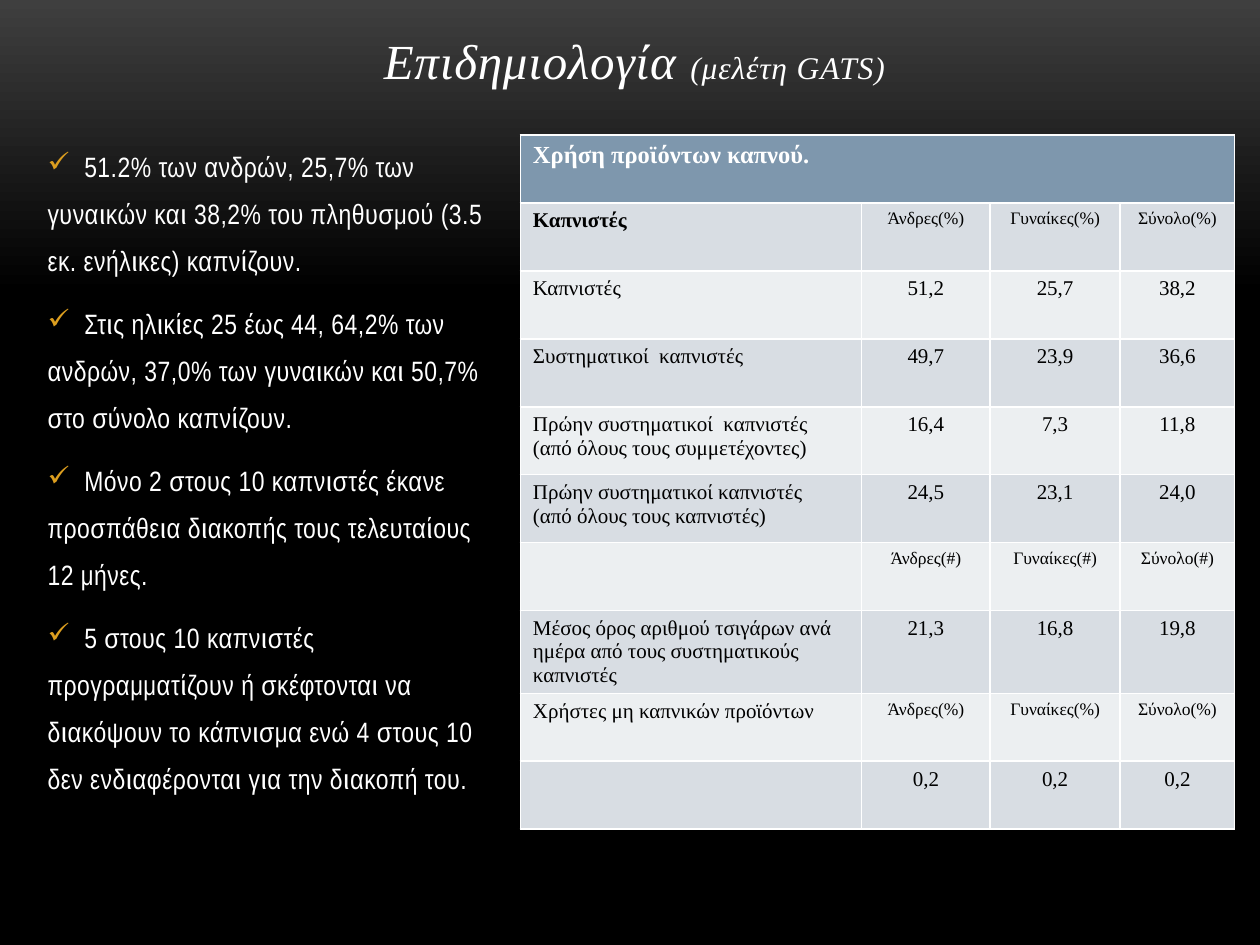
"""Build the slide on smoking rates with a title, a checked list and a table."""
from dataclasses import dataclass

import pptx
import pptx.dml.color
import pptx.enum.text
import pptx.oxml
import pptx.oxml.ns
import pptx.util

Cm = pptx.util.Cm
Pt = pptx.util.Pt
RGBColor = pptx.dml.color.RGBColor
Align = pptx.enum.text.PP_ALIGN

WHITE = RGBColor(0xFF, 0xFF, 0xFF)
BLACK = RGBColor(0x00, 0x00, 0x00)
GREY = RGBColor(0x3F, 0x3F, 0x3F)
BLUE = RGBColor(0x7E, 0x97, 0xAD)
DARK = RGBColor(0xD8, 0xDD, 0xE3)
LIGHT = RGBColor(0xEC, 0xEF, 0xF1)
GOLD = RGBColor(0xDC, 0x9E, 0x1F)
SERIF = "Times New Roman"
NARROW = "Arial Narrow"
TOP = Cm(2.72)


@dataclass
class Row:
    label: str
    cells: tuple[str, ...]
    size: int = 12
    bold: bool = False


def heads(unit: str) -> tuple[str, ...]:
    """Return the three column heads with their unit."""
    return tuple(f"{name}({unit})" for name in ("Άνδρες", "Γυναίκες", "Σύνολο"))


ROWS = [
    Row("Καπνιστές", heads("%"), 10, True),
    Row("Καπνιστές", ("51,2", "25,7", "38,2")),
    Row("Συστηματικοί  καπνιστές", ("49,7", "23,9", "36,6")),
    Row("Πρώην συστηματικοί  καπνιστές (από όλους τους συμμετέχοντες)",
        ("16,4", "7,3", "11,8")),
    Row("Πρώην συστηματικοί καπνιστές  (από όλους τους καπνιστές)",
        ("24,5", "23,1", "24,0")),
    Row("", heads("#"), 10),
    Row("Μέσος όρος αριθμού τσιγάρων ανά ημέρα από τους συστηματικούς καπνιστές",
        ("21,3", "16,8", "19,8")),
    Row("Χρήστες μη καπνικών προϊόντων", heads("%"), 10),
    Row("", ("0,2", "0,2", "0,2")),
]
WIDTHS = (6.88, 2.59, 2.62, 2.31)
POINTS = [
    "51.2% των ανδρών, 25,7% των γυναικών και 38,2% του πληθυσμού "
    "(3.5 εκ. ενήλικες) καπνίζουν.",
    "Στις ηλικίες 25 έως 44, 64,2% των ανδρών, 37,0% των γυναικών "
    "και 50,7% στο σύνολο καπνίζουν.",
    "Μόνο 2 στους 10 καπνιστές έκανε προσπάθεια διακοπής τους "
    "τελευταίους 12 μήνες.",
    "5 στους 10 καπνιστές προγραμματίζουν ή σκέφτονται να διακόψουν το "
    "κάπνισμα ενώ 4 στους 10 δεν ενδιαφέρονται για την διακοπή του.",
]


def style(par, face: str, size: float, tint: RGBColor, bold: bool = False) -> None:
    """Set the font of a whole paragraph."""
    font = par.font
    font.name, font.size, font.bold = face, Pt(size), bold
    font.color.rgb = tint


def space(par, gap: float) -> None:
    """Set the letter spacing of a paragraph in points."""
    props = par._p.pPr.find(pptx.oxml.ns.qn("a:defRPr"))
    props.set("spc", str(round(gap * 100)))


def check(par) -> None:
    """Give a paragraph a gold check mark and a tab stop."""
    names = pptx.oxml.ns.nsdecls("a")
    props = par._p.get_or_add_pPr()
    props.set("marL", "0")
    props.set("indent", "0")
    for part in (
        f'<a:buClr {names}><a:srgbClr val="{GOLD}"/></a:buClr>',
        f'<a:buChar {names} char="✓"/>',
        f'<a:tabLst {names}><a:tab pos="{Cm(0.74)}" algn="l"/></a:tabLst>',
    ):
        props.append(pptx.oxml.parse_xml(part))


def paint(slide) -> None:
    """Fill the background from grey at the top down to black."""
    fill = slide.background.fill
    fill.gradient()
    fill.gradient_angle = 270
    for stop, tint, place in zip(fill.gradient_stops, (GREY, BLACK), (0, 0.31)):
        stop.color.rgb = tint
        stop.position = place


def add_title(slide) -> None:
    """Place and write the title."""
    title = slide.shapes.title
    title.left, title.top = Cm(1.27), Cm(0.33)
    title.width, title.height = Cm(23.04), Cm(1.6)
    frame = title.text_frame
    frame.auto_size = pptx.enum.text.MSO_AUTO_SIZE.NONE
    frame.vertical_anchor = pptx.enum.text.MSO_ANCHOR.BOTTOM
    par = frame.paragraphs[0]
    par.alignment = Align.CENTER
    style(par, SERIF, 28, WHITE)
    par.font.italic = True
    space(par, 0.5)
    for text, size in (("Επιδημιολογία ", 28), ("(μελέτη GATS)", 18)):
        run = par.add_run()
        run.text, run.font.size = text, Pt(size)


def add_list(slide) -> None:
    """Write the checked list on the left."""
    frame = slide.shapes.add_textbox(Cm(0.71), TOP, Cm(9.4), Cm(14.4)).text_frame
    frame.word_wrap = True
    frame.margin_top = Cm(0.03)
    for index, text in enumerate(POINTS):
        par = frame.add_paragraph() if index else frame.paragraphs[0]
        par.text = "\t" + text
        check(par)
        par.line_spacing = 1.4
        par.space_before = Pt(3.2 if index else 0)
        par.space_after = Pt(6)
        style(par, NARROW, 16, WHITE)
        space(par, 0.3)


def fill_cell(cell, text: str, back: RGBColor, size: float,
              tint: RGBColor = BLACK, bold: bool = False,
              align: Align = Align.LEFT) -> None:
    """Write and colour one table cell."""
    cell.fill.solid()
    cell.fill.fore_color.rgb = back
    cell.text = text
    par = cell.text_frame.paragraphs[0]
    par.alignment = align
    style(par, SERIF, size, tint, bold)


def add_grid(slide) -> None:
    """Draw the table on the right."""
    count = len(ROWS) + 1
    high = Cm(1.37)
    table = slide.shapes.add_table(
        count, len(WIDTHS), Cm(10.49), TOP, Cm(sum(WIDTHS)), high * count).table
    for column, width in zip(table.columns, WIDTHS):
        column.width = Cm(width)
    for line in table.rows:
        line.height = high
    head = table.cell(0, 0)
    head.merge(table.cell(0, len(WIDTHS) - 1))
    fill_cell(head, "Χρήση προϊόντων καπνού.", BLUE, 14, WHITE, True)
    for index, row in enumerate(ROWS, 1):
        back = DARK if index % 2 else LIGHT
        fill_cell(table.cell(index, 0), row.label, back, 12, bold=row.bold)
        for place, text in enumerate(row.cells, 1):
            fill_cell(table.cell(index, place), text, back, row.size,
                      align=Align.CENTER)


def main() -> None:
    """Build and save the deck."""
    deck = pptx.Presentation()
    deck.slide_width, deck.slide_height = Cm(25.4), Cm(19.05)
    slide = deck.slides.add_slide(deck.slide_layouts[5])
    paint(slide)
    add_grid(slide)
    add_title(slide)
    add_list(slide)
    deck.save("out.pptx")


if __name__ == "__main__":
    main()
